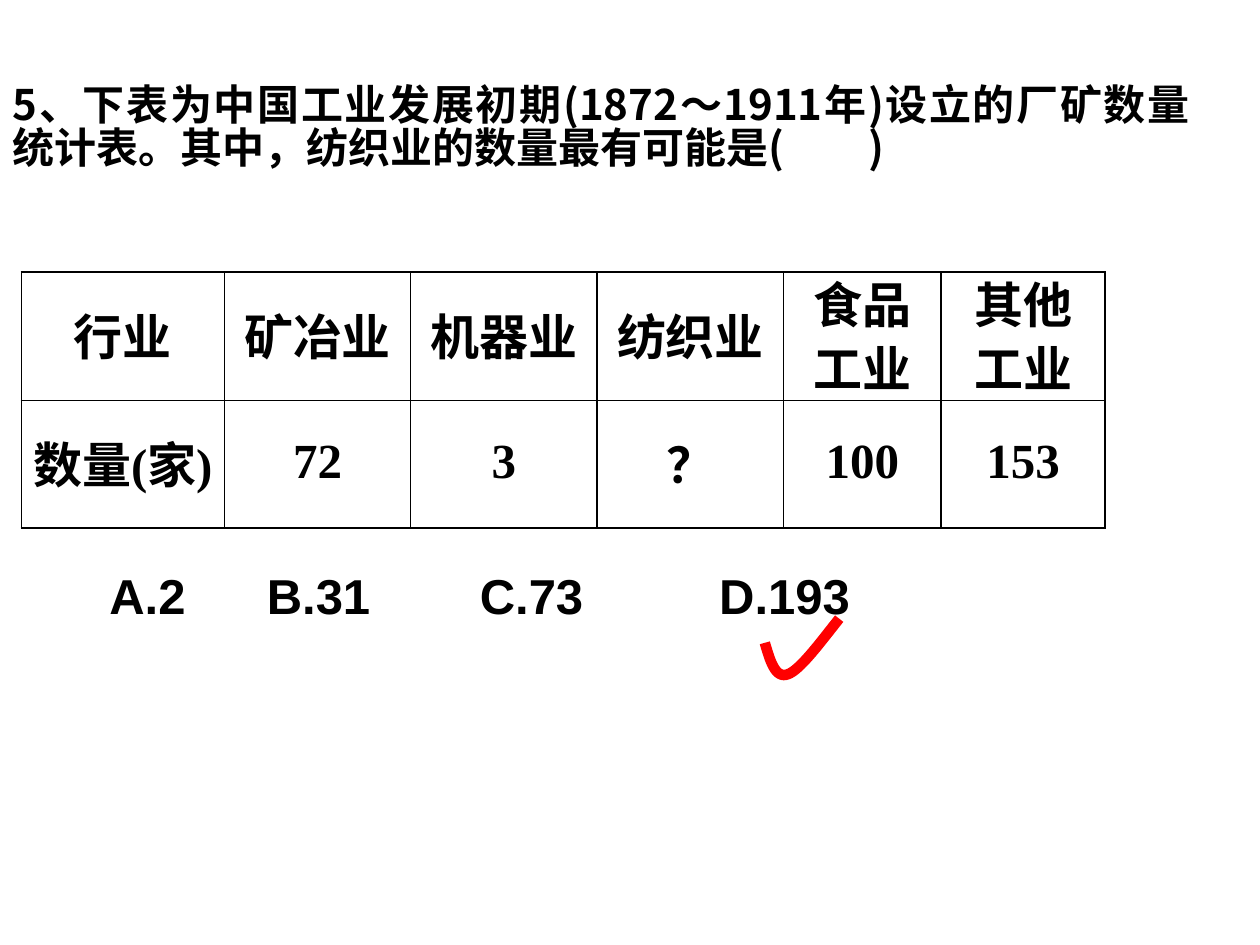
import pptx
import pptx.util
import pptx.dml.color
import pptx.enum.text
import pptx.oxml
import pptx.oxml.ns
import lxml.etree

Inches = pptx.util.Inches
Pt = pptx.util.Pt
ALIGN = pptx.enum.text.PP_ALIGN
ANCHOR = pptx.enum.text.MSO_ANCHOR
BLACK = pptx.dml.color.RGBColor(0, 0, 0)
RED = pptx.dml.color.RGBColor(255, 0, 0)
HAN = "Noto Sans CJK SC"

QUESTION = "5、下表为中国工业发展初期(1872～1911年)设立的厂矿数量统计表。其中，纺织业的数量最有可能是(　　)"
ROWS = [
    ["行业", "矿冶业", "机器业", "纺织业", "食品工业", "其他工业"],
    ["数量(家)", "72", "3", "？", "100", "153"],
]
WIDTHS = [1.61, 1.48, 1.48, 1.48, 1.25, 1.3]
HEIGHTS = [1.02, 0.98]
CHOICES = ["A.2", "B.31", "C.73", "D.193"]
STOPS = [1.25, 2.94, 4.84]


def add_node(parent, tag, **attrs):
    return lxml.etree.SubElement(parent, pptx.oxml.ns.qn(tag), attrs)


def style_text(para, size, face, align):
    para.alignment = align
    font = para.font
    font.name, font.size, font.bold = face, Pt(size), True
    font.color.rgb = BLACK
    props = para._p.get_or_add_pPr().find(pptx.oxml.ns.qn("a:defRPr"))
    add_node(props, "a:ea", typeface=HAN)


def add_question(slide, left, top, width, height):
    title = slide.shapes.title
    title.left, title.top = Inches(left), Inches(top)
    title.width, title.height = Inches(width), Inches(height)
    frame = title.text_frame
    frame.text = QUESTION
    frame.word_wrap = True
    frame.auto_size = pptx.enum.text.MSO_AUTO_SIZE.NONE
    frame.vertical_anchor = ANCHOR.TOP
    para = frame.paragraphs[0]
    style_text(para, 24, HAN, ALIGN.JUSTIFY)
    para.line_spacing = 0.84


def add_borders(cell):
    props = cell._tc.get_or_add_tcPr()
    for tag in ("a:lnL", "a:lnR", "a:lnT", "a:lnB"):
        line = add_node(props, tag, w=str(Pt(1)))
        fill = add_node(line, "a:solidFill")
        add_node(fill, "a:srgbClr", val=str(BLACK))


def fill_cell(cell, text):
    cell.text = text
    cell.margin_left = cell.margin_right = Inches(0.07)
    cell.margin_top = cell.margin_bottom = 0
    cell.vertical_anchor = ANCHOR.MIDDLE
    para = cell.text_frame.paragraphs[0]
    style_text(para, 28, "Times New Roman", ALIGN.CENTER)
    para.line_spacing = 0.9
    add_borders(cell)
    cell.fill.background()


def add_counts(slide, left, top, width, height):
    table = slide.shapes.add_table(
        len(ROWS), len(WIDTHS),
        Inches(left), Inches(top), Inches(width), Inches(height)).table
    table.first_row = table.horz_banding = False
    for col, size in zip(table.columns, WIDTHS):
        col.width = Inches(size)
    for row, size, texts in zip(table.rows, HEIGHTS, ROWS):
        row.height = Inches(size)
        for cell, text in zip(row.cells, texts):
            fill_cell(cell, text)


def add_choices(slide, left, top, width, height):
    box = slide.shapes.add_textbox(
        Inches(left), Inches(top), Inches(width), Inches(height))
    frame = box.text_frame
    frame.word_wrap = True
    frame.text = "\t".join(CHOICES)
    para = frame.paragraphs[0]
    style_text(para, 28, "Arial", ALIGN.LEFT)
    props = para._p.get_or_add_pPr()
    tabs = add_node(props, "a:tabLst")
    for stop in STOPS:
        add_node(tabs, "a:tab", pos=str(Inches(stop)), algn="l")
    props.insert(0, tabs)


def trace_curve(start, near, far, end, steps=16):
    for step in range(1, steps + 1):
        t = step / steps
        u = 1 - t
        yield tuple(
            u**3 * a + 3 * u * u * t * b + 3 * u * t * t * c + t**3 * d
            for a, b, c, d in zip(start, near, far, end))


def add_tick(slide, left, top, width, height):
    def place(point):
        return Inches(left + point[0] * width), Inches(top + point[1] * height)

    start, turn, end = (0, 0.4), (0.31, 0.92), (1, 0)
    points = [*trace_curve(start, (0.07, 0.69), (0.14, 1), turn),
              *trace_curve(turn, (0.47, 0.85), (0.73, 0.42), end)]
    pen = slide.shapes.build_freeform(*place(start))
    pen.add_line_segments([place(point) for point in points], close=False)
    tick = pen.convert_to_shape()
    tick.shadow.inherit = False
    tick.fill.background()
    tick.line.color.rgb = RED
    tick.line.width = Pt(6)


def main():
    deck = pptx.Presentation()
    deck.slide_width, deck.slide_height = Inches(10), Inches(7.5)
    slide = deck.slides.add_slide(deck.slide_layouts[5])
    add_question(slide, 0, 0.64, 9.54, 0.9)
    add_counts(slide, 0.17, 2.16, 8.59, 2)
    add_tick(slide, 6.07, 4.91, 0.59, 0.48)
    add_choices(slide, 0.77, 4.44, 7.53, 0.57)
    deck.save("out.pptx")


if __name__ == "__main__":
    main()
